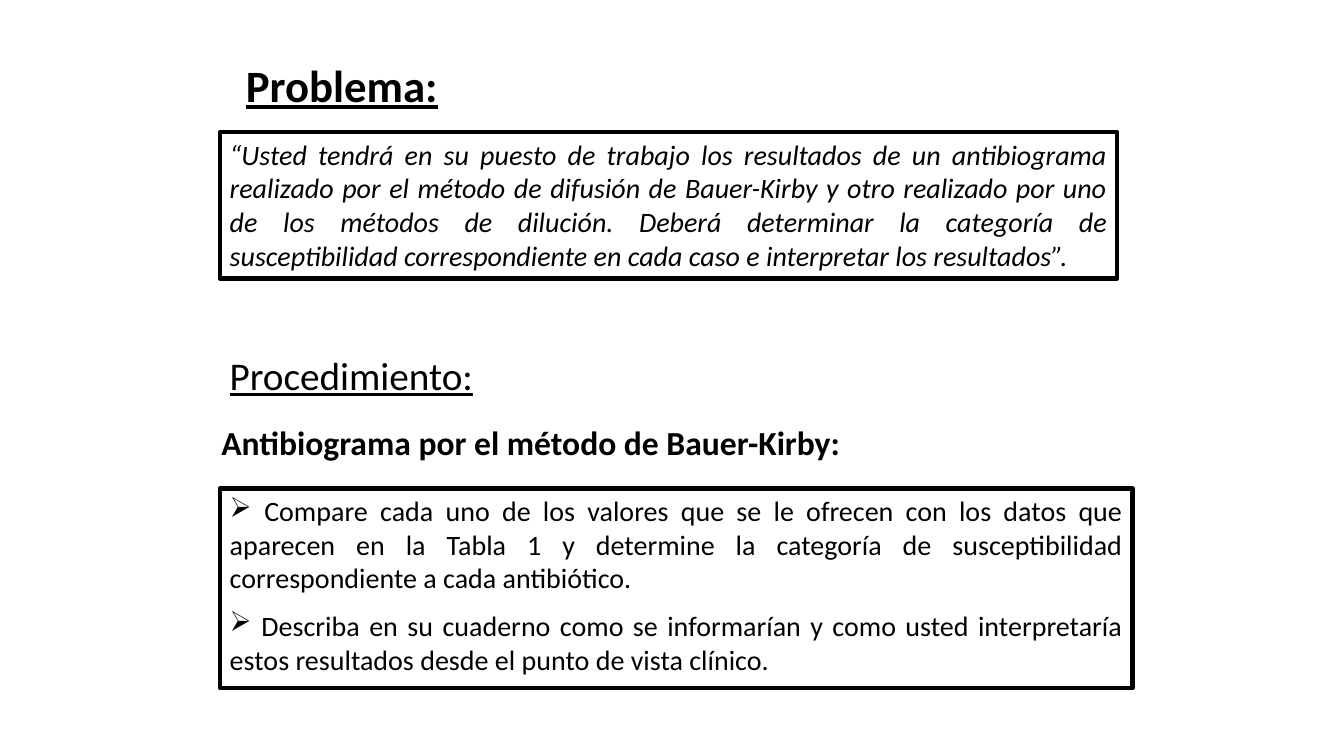
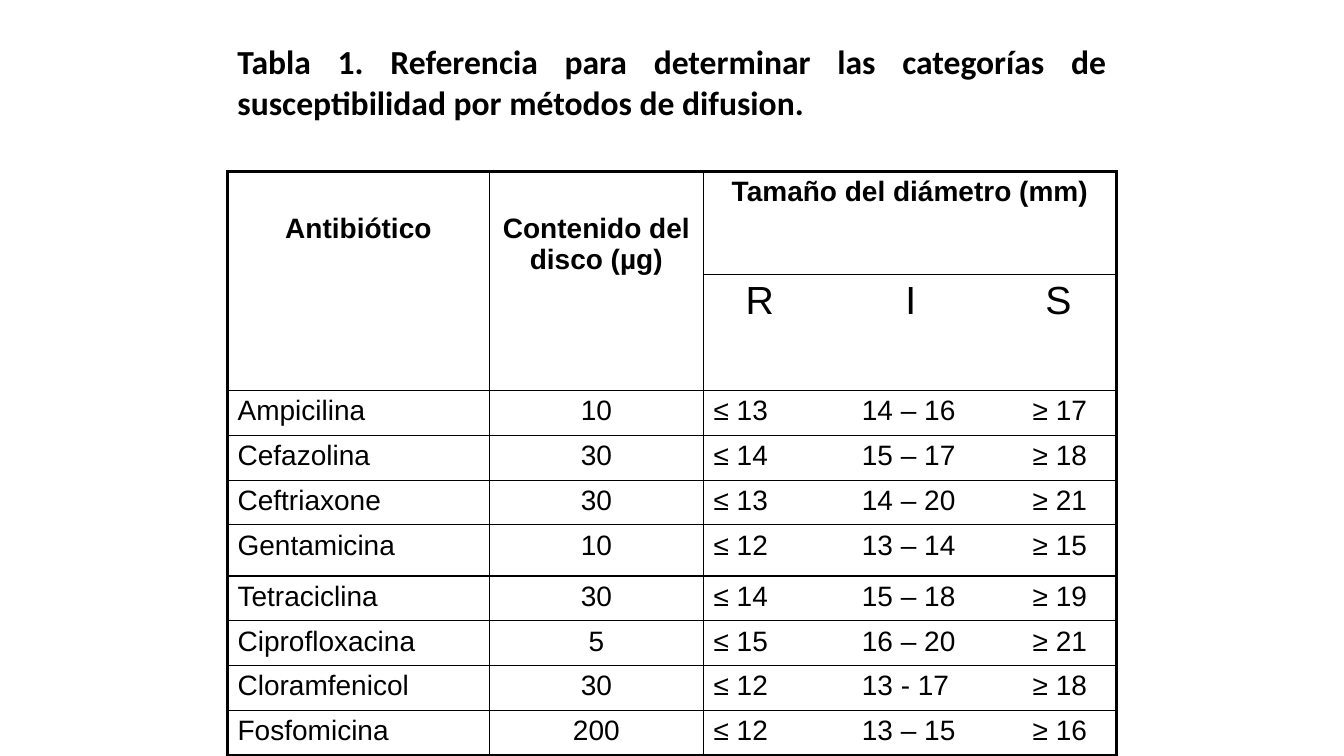
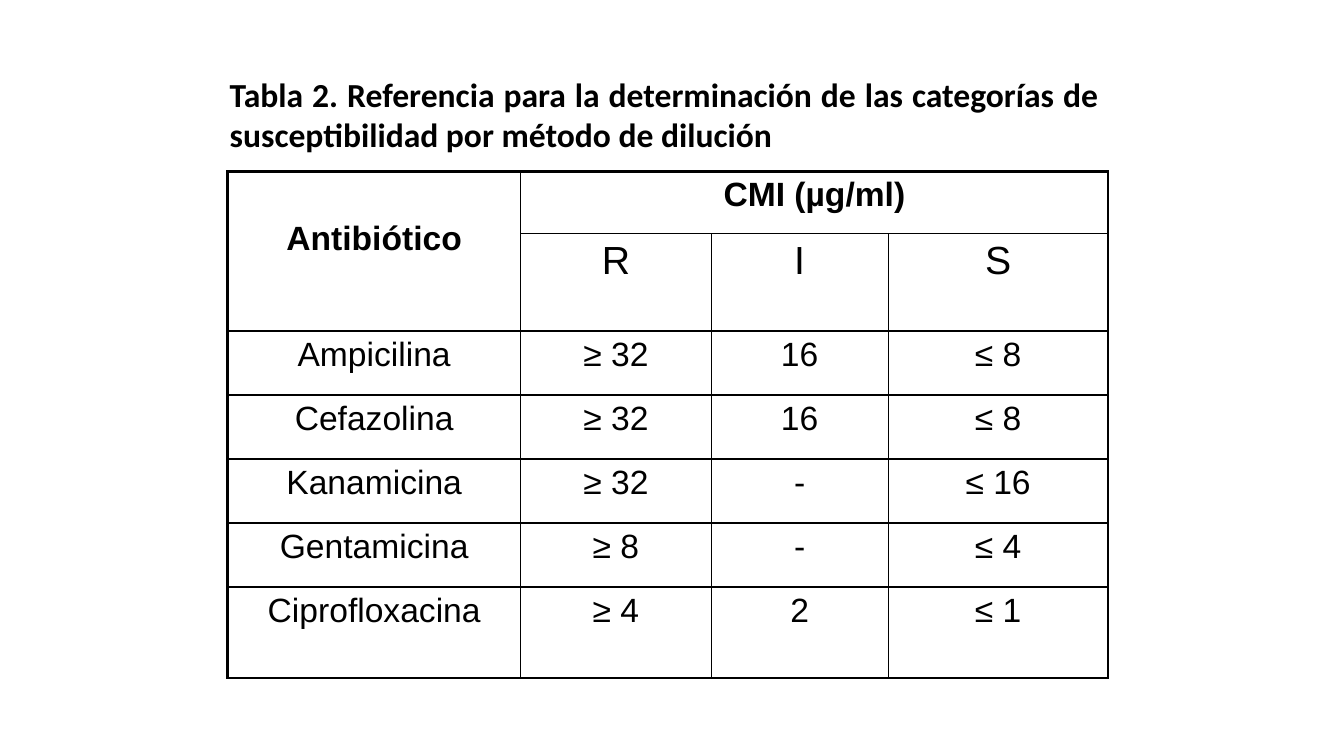
from dataclasses import dataclass

from lxml.etree import SubElement
from pptx import Presentation
from pptx.dml.color import RGBColor
from pptx.enum.shapes import MSO_SHAPE
from pptx.enum.text import MSO_ANCHOR, PP_ALIGN
from pptx.oxml.ns import qn
from pptx.util import Pt


@dataclass(frozen=True)
class Theme:
    ink: RGBColor = RGBColor(0, 0, 0)
    text_font: str = "Calibri"
    table_font: str = "Arial"
    title_size: float = 32
    section_size: float = 28
    heading_size: float = 24
    body_size: float = 20
    frame_width: float = 3
    outer_border: float = 2.25
    inner_border: float = 1
    side_margin: float = 7.2
    edge_margin: float = 3.6


THEME = Theme()


def write_text(text_frame, *texts, font=THEME.text_font, size=THEME.body_size,
               bold=False, italic=False, underline=False, align=PP_ALIGN.LEFT,
               gap=0, bullet=None, tabs=()):
    text_frame.word_wrap = True
    for index, text in enumerate(texts):
        paragraph = text_frame.paragraphs[0] if index == 0 else text_frame.add_paragraph()
        paragraph.alignment = align
        if index:
            paragraph.space_before = Pt(gap)
        properties = paragraph._p.get_or_add_pPr()
        if bullet:
            properties.set("marL", "0")
            properties.set("indent", "0")
            SubElement(properties, qn("a:buChar"), char=bullet)
        if tabs:
            tab_list = SubElement(properties, qn("a:tabLst"))
            for position in tabs:
                SubElement(tab_list, qn("a:tab"), pos=str(Pt(position)), algn="l")
        run = paragraph.add_run()
        run.text = text
        run.font.name = font
        run.font.size = Pt(size)
        run.font.bold = bold
        run.font.italic = italic
        run.font.underline = underline
        run.font.color.rgb = THEME.ink


class Deck:
    def __init__(self, theme):
        self.theme = theme
        self.presentation = Presentation()
        self.presentation.slide_width = Pt(960)
        self.presentation.slide_height = Pt(540)
        self.slide = None

    def new_slide(self):
        self.slide = self.presentation.slides.add_slide(self.presentation.slide_layouts[6])

    def text(self, left, top, width, height, *texts, **text_format):
        shape = self.slide.shapes.add_textbox(Pt(left), Pt(top), Pt(width), Pt(height))
        write_text(shape.text_frame, *texts, **text_format)

    def framed_text(self, left, top, width, height, *texts, **text_format):
        shape = self.slide.shapes.add_shape(
            MSO_SHAPE.RECTANGLE, Pt(left), Pt(top), Pt(width), Pt(height))
        shape.shadow.inherit = False
        shape.fill.background()
        shape.line.color.rgb = self.theme.ink
        shape.line.width = Pt(self.theme.frame_width)
        shape.text_frame.vertical_anchor = MSO_ANCHOR.TOP
        write_text(shape.text_frame, *texts, align=PP_ALIGN.JUSTIFY, **text_format)

    def caption(self, left, top, text):
        self.text(left, top, 635, 65.5, text, size=self.theme.heading_size,
                  bold=True, align=PP_ALIGN.JUSTIFY)

    def table(self, left, top, column_widths, row_heights, merges):
        shape = self.slide.shapes.add_table(
            len(row_heights), len(column_widths), Pt(left), Pt(top),
            Pt(sum(column_widths)), Pt(sum(row_heights)))
        table = shape.table
        table.first_row = False
        table.horz_banding = False
        for column, width in zip(table.columns, column_widths):
            column.width = Pt(width)
        for row, height in zip(table.rows, row_heights):
            row.height = Pt(height)
        for first, last in merges:
            table.cell(*first).merge(table.cell(*last))
        for row in range(len(row_heights)):
            for column in range(len(column_widths)):
                cell = table.cell(row, column)
                self.borders(cell, {
                    "a:lnL": column == 0,
                    "a:lnR": column + cell.span_width == len(column_widths),
                    "a:lnT": row == 0,
                    "a:lnB": row + cell.span_height == len(row_heights)})
                cell.fill.background()
        return table

    def borders(self, cell, sides):
        properties = cell._tc.get_or_add_tcPr()
        for side, is_outer in sides.items():
            width = self.theme.outer_border if is_outer else self.theme.inner_border
            line = SubElement(properties, qn(side), w=str(Pt(width)))
            fill = SubElement(line, qn("a:solidFill"))
            SubElement(fill, qn("a:srgbClr"), val=str(self.theme.ink))

    def cell(self, cell, text, top_gap=0, **text_format):
        cell.margin_left = cell.margin_right = Pt(self.theme.side_margin)
        cell.margin_top = Pt(self.theme.edge_margin + top_gap)
        cell.margin_bottom = Pt(self.theme.edge_margin)
        cell.vertical_anchor = MSO_ANCHOR.TOP
        write_text(cell.text_frame, text, font=self.theme.table_font, **text_format)

    def header(self, cell, text, size, lowered=False):
        self.cell(cell, text, top_gap=1.3 * size if lowered else 0,
                  size=size, bold=True, align=PP_ALIGN.CENTER)

    def body(self, table, rows, column_formats, **text_format):
        for row_index, row in enumerate(rows, start=2):
            for column, (text, column_format) in enumerate(zip(row, column_formats)):
                self.cell(table.cell(row_index, column), text, **column_format, **text_format)


def add_problem_slide(deck):
    theme = deck.theme
    deck.new_slide()
    deck.text(168.5, 37.5, 176, 45.5, "Problema:",
              size=theme.title_size, bold=True, underline=True)
    deck.framed_text(
        157, 94.5, 641, 104.5,
        "“Usted tendrá en su puesto de trabajo los resultados de un antibiograma realizado "
        "por el método de difusión de Bauer-Kirby y otro realizado por uno de los métodos "
        "de dilución. Deberá determinar la categoría de susceptibilidad correspondiente en "
        "cada caso e interpretar los resultados”.", italic=True)
    deck.text(157, 247.5, 221, 41, "Procedimiento:", size=theme.section_size, underline=True)
    deck.text(151, 298, 533, 36, "Antibiograma por el método de Bauer-Kirby:",
              size=theme.heading_size, bold=True)
    deck.framed_text(
        157, 349, 652, 142.5,
        " Compare cada uno de los valores que se le ofrecen con los datos que aparecen en la "
        "Tabla 1 y determine la categoría de susceptibilidad correspondiente a cada antibiótico.",
        " Describa en su cuaderno como se informarían y como usted interpretaría estos "
        "resultados desde el punto de vista clínico.", bullet="➢", gap=10)


def add_diffusion_slide(deck):
    size = deck.theme.body_size
    deck.new_slide()
    deck.caption(162.5, 26, "Tabla 1. Referencia para determinar las categorías de "
                            "susceptibilidad por métodos de difusion.")
    table = deck.table(162.5, 122.5, [187, 153, 295],
                       [73.5, 83] + [32] * 3 + [36.5] + [32] * 4,
                       [((0, 0), (1, 0)), ((0, 1), (1, 1))])
    deck.header(table.cell(0, 0), "Antibiótico", size, lowered=True)
    deck.header(table.cell(0, 1), "Contenido del disco (µg)", size, lowered=True)
    deck.header(table.cell(0, 2), "Tamaño del diámetro (mm)", size)
    deck.cell(table.cell(1, 2), "\tR\tI\tS", size=deck.theme.section_size, tabs=(23, 137, 237))
    rows = [
        ("Ampicilina", "10", "≤ 13\t14 – 16\t≥ 17"),
        ("Cefazolina", "30", "≤ 14\t15 – 17\t≥ 18"),
        ("Ceftriaxone", "30", "≤ 13\t14 – 20\t≥ 21"),
        ("Gentamicina", "10", "≤ 12\t13 – 14\t≥ 15"),
        ("Tetraciclina", "30", "≤ 14\t15 – 18\t≥ 19"),
        ("Ciprofloxacina", "5", "≤ 15\t16 – 20\t≥ 21"),
        ("Cloramfenicol", "30", "≤ 12\t13 - 17\t≥ 18"),
        ("Fosfomicina", "200", "≤ 12\t13 – 15\t≥ 16"),
    ]
    deck.body(table, rows, [{}, {"align": PP_ALIGN.CENTER}, {"tabs": (106, 228)}], size=size)


def add_dilution_slide(deck):
    size = deck.theme.heading_size
    centred = {"align": PP_ALIGN.CENTER}
    deck.new_slide()
    deck.caption(157, 49, "Tabla 2. Referencia para la determinación de las categorías de "
                          "susceptibilidad por método de dilución")
    table = deck.table(162.5, 122.5, [209.5, 136, 126.5, 157],
                       [44.5, 69.5] + [45.7] * 4 + [65],
                       [((0, 0), (1, 0)), ((0, 1), (0, 3))])
    deck.header(table.cell(0, 0), "Antibiótico", size, lowered=True)
    deck.header(table.cell(0, 1), "CMI (µg/ml)", size)
    for column, category in enumerate("RIS", start=1):
        deck.cell(table.cell(1, column), category, size=deck.theme.section_size, **centred)
    rows = [
        ("Ampicilina", "≥ 32", "16", "≤ 8"),
        ("Cefazolina", "≥ 32", "16", "≤ 8"),
        ("Kanamicina", "≥ 32", "-", "≤ 16"),
        ("Gentamicina", "≥ 8", "-", "≤ 4"),
        ("Ciprofloxacina", "≥ 4", "2", "≤ 1"),
    ]
    deck.body(table, rows, [centred] * 4, size=size)


def main():
    deck = Deck(THEME)
    add_problem_slide(deck)
    add_diffusion_slide(deck)
    add_dilution_slide(deck)
    deck.presentation.save("out.pptx")


if __name__ == "__main__":
    main()
